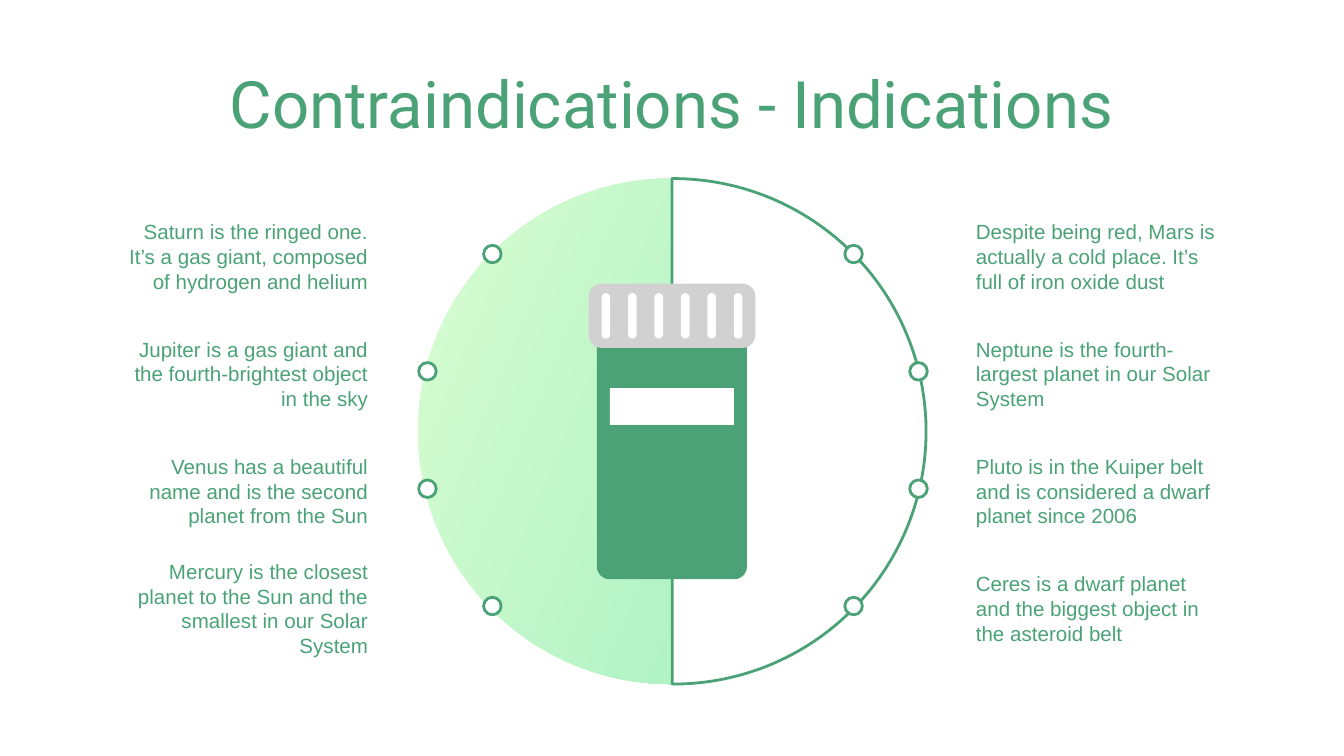
"""Build the contraindications and indications slide with a medicine bottle."""
import pptx
import pptx.util
import pptx.dml.color
import pptx.enum.shapes
import pptx.enum.text

Pt = pptx.util.Pt
KIND = pptx.enum.shapes.MSO_SHAPE
ALIGN = pptx.enum.text.PP_ALIGN
GREEN = pptx.dml.color.RGBColor(0x4A, 0xA2, 0x76)
PALE = pptx.dml.color.RGBColor(0xE3, 0xFF, 0xD5)
MINT = pptx.dml.color.RGBColor(0x90, 0xEB, 0xBA)
GREY = pptx.dml.color.RGBColor(0xD1, 0xD1, 0xD1)
WHITE = pptx.dml.color.RGBColor(0xFF, 0xFF, 0xFF)

ROW_STEP = 62.87
DOT_TOP = 131.4
DOT_SIZE = 9.4
TEXT_TOP = 117.4
CHORD_ANGLES = (40.296, 148.61)

deck = pptx.Presentation()
deck.slide_width, deck.slide_height = Pt(720), Pt(405)
page = deck.slides.add_slide(deck.slide_layouts[6])


def add_figure(kind, left, top, width, height, fill=None, line=None, radius=None):
    figure = page.shapes.add_shape(kind, Pt(left), Pt(top), Pt(width), Pt(height))
    figure.shadow.inherit = False
    if fill is None:
        figure.fill.background()
    else:
        figure.fill.solid()
        figure.fill.fore_color.rgb = fill
    if line is None:
        figure.line.fill.background()
    else:
        figure.line.color.rgb = line
        figure.line.width = Pt(1.5)
    if radius is not None:
        figure.adjustments[0] = radius / min(width, height)
    return figure


def add_text(words, left, top, width, height, align, font):
    box = page.shapes.add_textbox(Pt(left), Pt(top), Pt(width), Pt(height))
    frame_format = {
        "word_wrap": True,
        "vertical_anchor": pptx.enum.text.MSO_ANCHOR.MIDDLE,
        "margin_left": Pt(7.2),
        "margin_right": Pt(7.2),
        "margin_top": Pt(7.2),
        "margin_bottom": Pt(7.2),
    }
    for name, value in frame_format.items():
        setattr(box.text_frame, name, value)
    para = box.text_frame.paragraphs[0]
    para.alignment = align
    span = para.add_run()
    span.text = words
    for name, value in font.items():
        setattr(span.font, name, value)
    span.font.color.rgb = GREEN


left_half = add_figure(KIND.CHORD, 224, 95.7, 270.8, 270.8)
left_half.rotation = 22.6
left_half.fill.gradient()
left_half.fill.gradient_angle = 0
for stop, color, position in zip(left_half.fill.gradient_stops, (PALE, MINT), (0, 1)):
    stop.color.rgb = color
    stop.position = position

right_half = add_figure(KIND.CHORD, 225.3, 95.7, 270.8, 270.8, line=GREEN)
right_half.rotation = 337.4
right_half._element.spPr.xfrm.set("flipH", "1")

for half in (left_half, right_half):
    for index, angle in enumerate(CHORD_ANGLES):
        half.adjustments[index] = angle

for row, (left_dot, right_dot) in enumerate(
    [(259.1, 452.6), (224.3, 487.4), (224.3, 487.4), (259.1, 452.6)]
):
    for left in (left_dot, right_dot):
        add_figure(KIND.OVAL, left, DOT_TOP + row * ROW_STEP, DOT_SIZE, DOT_SIZE, WHITE, GREEN)

add_text("Contraindications - Indications", 56.7, 42.5, 606.6, 25.2, ALIGN.CENTER,
         {"name": "Roboto", "size": Pt(35)})

columns = [
    (56.7, ALIGN.RIGHT, [
        "Saturn is the ringed one. It’s a gas giant, composed of hydrogen and helium",
        "Jupiter is a gas giant and the fourth-brightest object in the sky",
        "Venus has a beautiful name and is the second planet from the Sun",
        "Mercury is the closest planet to the Sun and the smallest in our Solar System",
    ]),
    (515.7, ALIGN.LEFT, [
        "Despite being red, Mars is actually a cold place. It’s full of iron oxide dust",
        "Neptune is the fourth-largest planet in our Solar System",
        "Pluto is in the Kuiper belt and is considered a dwarf planet since 2006",
        "Ceres is a dwarf planet and the biggest object in the asteroid belt",
    ]),
]
for left, align, sentences in columns:
    for row, sentence in enumerate(sentences):
        add_text(sentence, left, TEXT_TOP + row * ROW_STEP, 147.6, 39.6, align,
                 {"name": "Arial", "size": Pt(11)})

add_figure(KIND.ROUNDED_RECTANGLE, 319.8, 155.5, 80.4, 154.8, GREEN, radius=6.8)
add_figure(KIND.ROUNDED_RECTANGLE, 315.4, 152, 89.2, 34.4, GREY, radius=6.8)
for ridge in range(6):
    add_figure(KIND.ROUNDED_RECTANGLE, 322.3 + ridge * 14.17, 157, 4.6, 24.4, WHITE, radius=2.3)
add_figure(KIND.RECTANGLE, 326.8, 207.9, 66.4, 19.8, WHITE)

deck.save("out.pptx")
